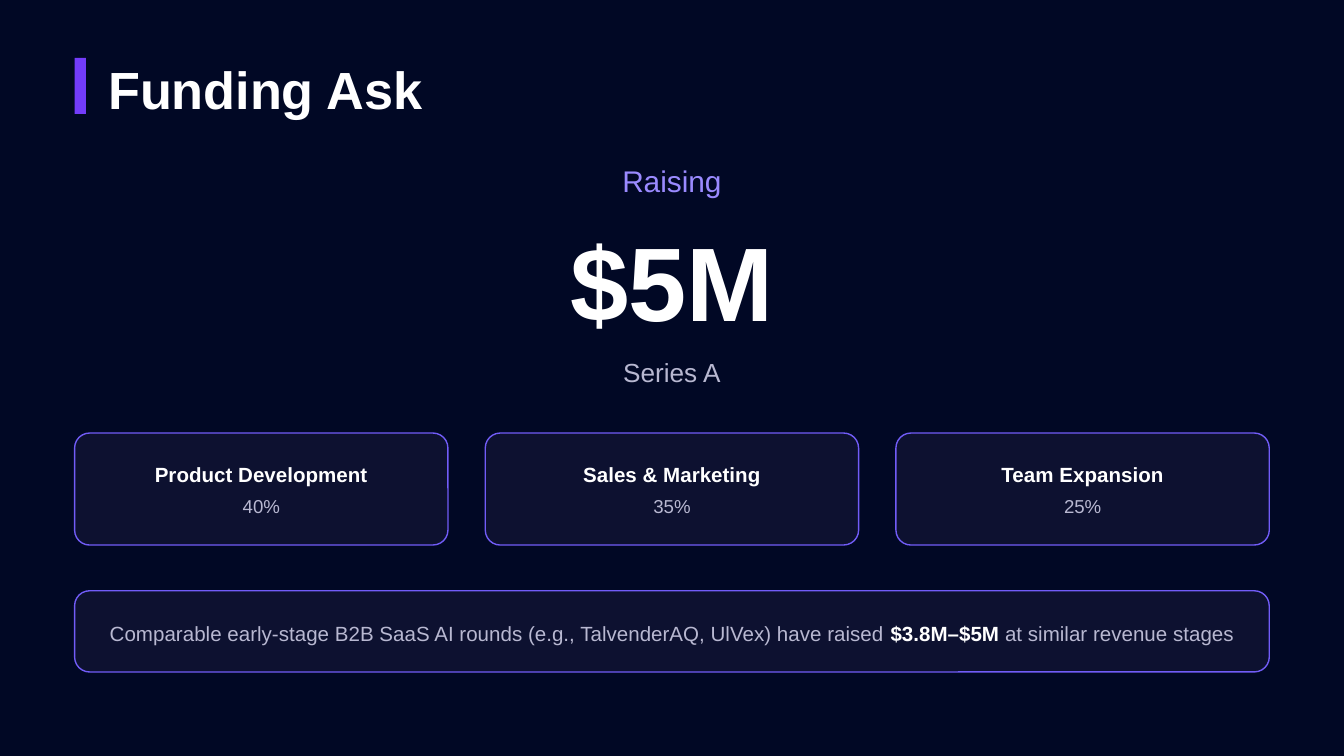
from pptx import Presentation
from pptx.dml.color import RGBColor
from pptx.enum.shapes import MSO_SHAPE
from pptx.enum.text import PP_ALIGN
from pptx.util import Pt

RECT, ROUNDED = MSO_SHAPE.RECTANGLE, MSO_SHAPE.ROUNDED_RECTANGLE
LEFT, CENTER = PP_ALIGN.LEFT, PP_ALIGN.CENTER

NAVY = RGBColor(0x01, 0x08, 0x25)
PANEL = RGBColor(0x0D, 0x11, 0x30)
VIOLET = RGBColor(0x73, 0x3C, 0xFA)
BORDER = RGBColor(0x71, 0x5C, 0xF7)
LAVENDER = RGBColor(0x9A, 0x8A, 0xFF)
MUTED = RGBColor(0xB8, 0xB8, 0xD1)
WHITE = RGBColor(0xFF, 0xFF, 0xFF)

MARGIN, CONTENT_W = 40, 640
CARD_TOP, CARD_W, CARD_H, CARD_GAP = 232, 200, 60, 20
CARD_PAD = 14

USES = [("Product Development", "40%"), ("Sales & Marketing", "35%"), ("Team Expansion", "25%")]


class Deck:
    font = "Arial"
    radius = 8

    def __init__(self, width, height):
        self.prs = Presentation()
        self.prs.slide_width, self.prs.slide_height = Pt(width), Pt(height)

    def add_slide(self, color):
        self.s = self.prs.slides.add_slide(self.prs.slide_layouts[6])
        fill = self.s.background.fill
        fill.solid()
        fill.fore_color.rgb = color

    def shape(self, kind, x, y, w, h, color):
        sp = self.s.shapes.add_shape(kind, Pt(x), Pt(y), Pt(w), Pt(h))
        sp.shadow.inherit = False
        sp.fill.solid()
        sp.fill.fore_color.rgb = color
        sp.line.fill.background()
        return sp

    def panel(self, x, y, w, h):
        sp = self.shape(ROUNDED, x, y, w, h, PANEL)
        sp.adjustments[0] = self.radius / min(w, h)
        sp.line.color.rgb = BORDER
        sp.line.width = Pt(0.75)

    def text(self, x, y, w, h, runs, size, color=WHITE, bold=False, align=CENTER):
        """Add one line; runs is a string or a list of (text, is_highlighted)."""
        tf = self.s.shapes.add_textbox(Pt(x), Pt(y), Pt(w), Pt(h)).text_frame
        tf.word_wrap = True
        tf.margin_left = tf.margin_right = tf.margin_top = tf.margin_bottom = 0
        p = tf.paragraphs[0]
        p.alignment = align
        p.font.name, p.font.size = self.font, Pt(size)
        p.font.bold, p.font.color.rgb = bold, color
        for content, highlighted in [(runs, False)] if isinstance(runs, str) else runs:
            r = p.add_run()
            r.text = content
            if highlighted:
                r.font.bold, r.font.color.rgb = True, WHITE


def main():
    deck = Deck(720, 405)
    deck.add_slide(NAVY)

    deck.shape(RECT, MARGIN, 31, 6, 30, VIOLET)
    deck.text(58, 30.5, 172, 32, "Funding Ask", 28, bold=True, align=LEFT)

    deck.text(33.5, 87, 653, 19, "Raising", 16, LAVENDER)
    deck.text(33.5, 116, 653, 65, "$5M", 56, bold=True)
    deck.text(33.5, 191, 653, 16.5, "Series A", 14, MUTED)

    for i, (use, share) in enumerate(USES):
        x = MARGIN + i * (CARD_W + CARD_GAP)
        text_x, text_w = x + CARD_PAD, CARD_W - 2 * CARD_PAD
        deck.panel(x, CARD_TOP, CARD_W, CARD_H)
        deck.text(text_x, CARD_TOP + 15.75, text_w, 12.5, use, 11, bold=True)
        deck.text(text_x, CARD_TOP + 33, text_w, 11.5, share, 10, MUTED)

    deck.panel(MARGIN, 316.5, CONTENT_W, 43.5)
    deck.text(50, 332.75, 620, 12.5, [
        ("Comparable early-stage B2B SaaS AI rounds (e.g., TalvenderAQ, UlVex) have raised ", False),
        ("$3.8M–$5M", True),
        (" at similar revenue stages", False),
    ], 11, MUTED)

    deck.prs.save("out.pptx")


if __name__ == "__main__":
    main()
